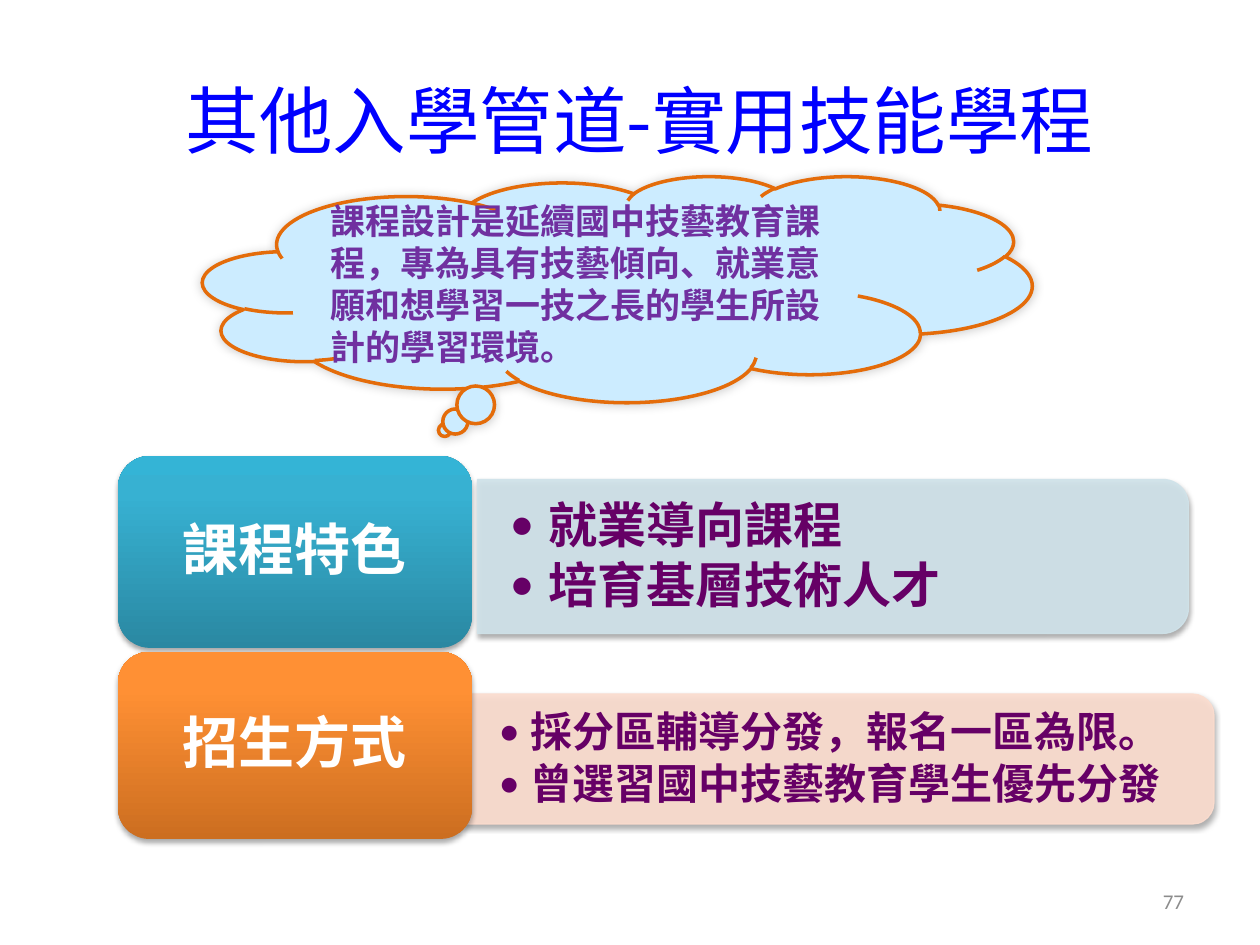
from dataclasses import dataclass

import pptx
import pptx.dml.color
import pptx.enum.shapes
import pptx.enum.text
import pptx.oxml
import pptx.oxml.ns
import pptx.util

PX = 914400 / 126
CJK = "Noto Sans CJK SC"
SHAPES = pptx.enum.shapes.MSO_SHAPE
ALIGN = pptx.enum.text.PP_ALIGN
NAMESPACE = 'xmlns:a="http://schemas.openxmlformats.org/drawingml/2006/main"'


@dataclass
class Area:
    left: int
    top: int
    width: int
    height: int

    def emu(self) -> list:
        return [px(n) for n in (self.left, self.top, self.width, self.height)]

    def quarter_turned(self) -> "Area":
        shift = (self.width - self.height) // 2
        return Area(self.left + shift, self.top - shift, self.height, self.width)


@dataclass
class Section:
    heading: str
    card: Area
    gradient: tuple
    panel: Area
    panel_color: str
    points_area: Area
    points: list
    points_size: int
    indent: int


SECTIONS = [
    Section("課程特色", Area(118, 456, 354, 192), ("2A88A2", "37B1D2", "34B4D6"),
            Area(478, 479, 711, 154), "D0E3EA", Area(476, 488, 704, 138),
            ["就業導向課程", "培育基層技術人才"], 28, 39),
    Section("招生方式", Area(118, 652, 354, 187), ("CC6E20", "FF9034", "FF9136"),
            Area(466, 694, 748, 130), "FCDDCF", Area(465, 701, 742, 117),
            ["採分區輔導分發，報名一區為限。", "曾選習國中技藝教育學生優先分發"], 24, 32),
]


def px(count: int) -> int:
    return round(count * PX)


def rgb(value: str):
    return pptx.dml.color.RGBColor.from_string(value)


def element(xml: str):
    tag, rest = xml.split(" ", 1)
    return pptx.oxml.parse_xml(f"{tag} {NAMESPACE} {rest}")


def shadow_element(alpha: int, blur: float, distance: float, angle: int):
    return element(
        f'<a:outerShdw blurRad="{pptx.util.Pt(blur)}" dist="{pptx.util.Pt(distance)}" '
        f'dir="{angle * 60000}" algn="ctr" rotWithShape="0"><a:srgbClr val="000000">'
        f'<a:alpha val="{alpha * 1000}"/></a:srgbClr></a:outerShdw>')


def add_shadow(shape, alpha=35, blur=3.1, distance=1.8, angle=90) -> None:
    shape.shadow.inherit = False
    effects = shape._element.spPr.find(pptx.oxml.ns.qn("a:effectLst"))
    effects.append(shadow_element(alpha, blur, distance, angle))


def write(shape, lines: list, size: int, color: str, font=CJK, bold=False,
          align=ALIGN.LEFT, spacing=None, after=0, indent=0, inset=(13, 6),
          text_shadow=False) -> None:
    frame = shape.text_frame
    frame.word_wrap = True
    frame.vertical_anchor = pptx.enum.text.MSO_ANCHOR.MIDDLE
    frame.margin_left = frame.margin_right = px(inset[0])
    frame.margin_top = frame.margin_bottom = px(inset[1])
    for index, line in enumerate(lines):
        para = frame.add_paragraph() if index else frame.paragraphs[0]
        if indent:
            properties = para._p.get_or_add_pPr()
            properties.set("marL", str(px(indent)))
            properties.set("indent", str(-px(indent)))
            properties.append(element('<a:buFont typeface="Calibri"/>'))
            properties.append(element('<a:buChar char="•"/>'))
            para.level = 1
        para.alignment = align
        if spacing:
            para.line_spacing = spacing
        if after:
            para.space_after = pptx.util.Pt(after)
        span = para.add_run()
        span.text = line
        span.font.size = pptx.util.Pt(size)
        span.font.bold = bold
        span.font.color.rgb = rgb(color)
        span.font.name = font
        latin = span._r.rPr.find(pptx.oxml.ns.qn("a:latin"))
        latin.addnext(element(f'<a:ea typeface="{font}"/>'))
        if text_shadow:
            effects = element("<a:effectLst />")
            effects.append(shadow_element(43, 3, 3, 45))
            latin.addprevious(effects)


def add_panel(page, area: Area, color: str) -> None:
    panel = page.shapes.add_shape(SHAPES.ROUND_2_SAME_RECTANGLE,
                                  *area.quarter_turned().emu())
    panel.rotation = 90
    panel.fill.solid()
    panel.fill.fore_color.rgb = rgb(color)
    panel.line.color.rgb = rgb(color)
    panel.line.width = pptx.util.Pt(0.75)
    for paint in panel._element.spPr.iter(pptx.oxml.ns.qn("a:srgbClr")):
        paint.append(element('<a:alpha val="90000"/>'))
    add_shadow(panel)


def add_card(page, area: Area, colors: tuple, heading: str) -> None:
    card = page.shapes.add_shape(SHAPES.ROUNDED_RECTANGLE, *area.emu())
    stops = "".join(f'<a:gs pos="{place * 1000}"><a:srgbClr val="{color}"/></a:gs>'
                    for place, color in zip((0, 80, 100), colors))
    geometry = card._element.spPr.find(pptx.oxml.ns.qn("a:prstGeom"))
    geometry.addnext(element(
        f'<a:gradFill rotWithShape="1"><a:gsLst>{stops}</a:gsLst>'
        '<a:lin ang="16200000" scaled="0"/></a:gradFill>'))
    card.line.fill.background()
    add_shadow(card)
    write(card, [heading], 32, "FFFFFF", bold=True, align=ALIGN.CENTER,
          spacing=0.9, after=11.2, inset=(16, 9))


def add_section(page, section: Section) -> None:
    add_panel(page, section.panel, section.panel_color)
    box = page.shapes.add_textbox(*section.points_area.emu())
    size = section.points_size
    write(box, section.points, size, "660066", bold=True,
          spacing=pptx.util.Pt(round(size * 1.08, 1)), after=round(size * 0.15, 1),
          indent=section.indent, inset=(34, 18))
    add_card(page, section.card, section.gradient, section.heading)


def add_cloud(page) -> None:
    cloud = page.shapes.add_shape(SHAPES.CLOUD_CALLOUT, *Area(203, 176, 829, 226).emu())
    cloud.fill.solid()
    cloud.fill.fore_color.rgb = rgb("CCECFF")
    cloud.line.color.rgb = rgb("E46C0A")
    cloud.line.width = pptx.util.Pt(2)
    add_shadow(cloud, alpha=20, blur=6, distance=0, angle=315)
    write(cloud, ["課程設計是延續國中技藝教育課程，專為具有技藝傾向、就業意願和想學習"
                  "一技之長的學生所設計的學習環境。"],
          20, "7030A0", bold=True, spacing=pptx.util.Pt(24))


def main() -> None:
    deck = pptx.Presentation()
    deck.slide_width, deck.slide_height = px(1260), px(945)
    page = deck.slides.add_slide(deck.slide_layouts[6])
    for section in SECTIONS:
        add_section(page, section)
    title = page.shapes.add_textbox(*Area(118, 69, 1043, 100).emu())
    write(title, ["其他入學管道-實用技能學程"], 42, "0000FF", align=ALIGN.CENTER,
          text_shadow=True)
    add_cloud(page)
    number = page.shapes.add_textbox(*Area(903, 876, 294, 50).emu())
    write(number, ["77"], 12, "8C8C8C", font="Calibri", align=ALIGN.RIGHT)
    deck.save("out.pptx")


if __name__ == "__main__":
    main()
